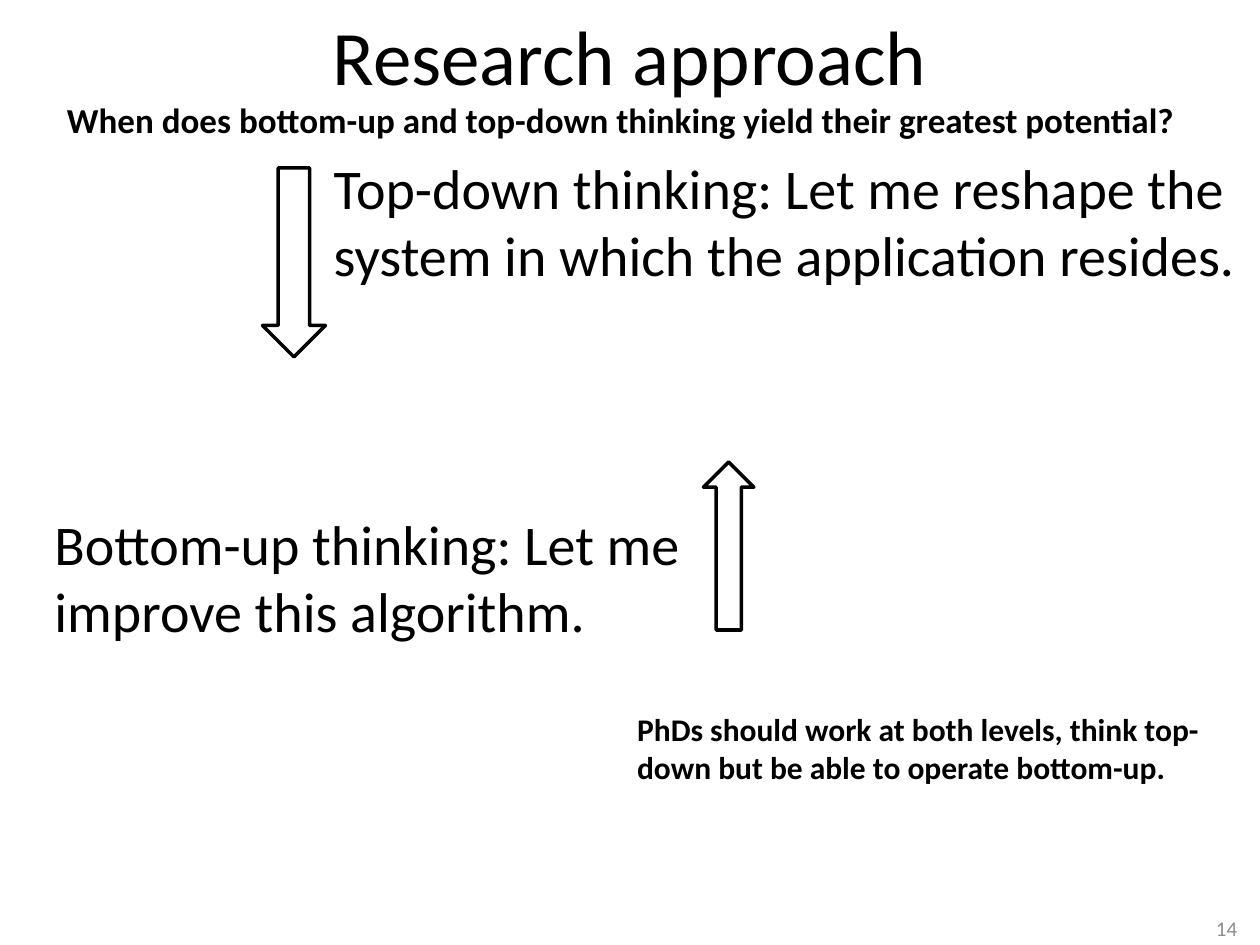
from pptx import Presentation
from pptx.dml.color import RGBColor
from pptx.enum.shapes import MSO_SHAPE
from pptx.enum.text import MSO_ANCHOR, PP_ALIGN
from pptx.util import Inches, Pt

BLACK = RGBColor(0x00, 0x00, 0x00)
GREY = RGBColor(0x8C, 0x8C, 0x8C)
FONT = "Calibri"
LEFT, CENTER, RIGHT = PP_ALIGN.LEFT, PP_ALIGN.CENTER, PP_ALIGN.RIGHT
TOP, MIDDLE = MSO_ANCHOR.TOP, MSO_ANCHOR.MIDDLE
DOWN, UP = MSO_SHAPE.DOWN_ARROW, MSO_SHAPE.UP_ARROW
COLUMNS, ROWS = 120, 90
CELL = Inches(10) / COLUMNS


def place(box):
    """Turn a box of grid columns and rows into slide lengths."""
    return [round(length * CELL) for length in box]


def add_text(page, box, text, size, bold=False, align=LEFT, anchor=TOP, color=BLACK):
    """Write one paragraph in a wrapping text box."""
    frame = page.shapes.add_textbox(*place(box)).text_frame
    frame.word_wrap = True
    frame.vertical_anchor = anchor
    frame.text = text
    para = frame.paragraphs[0]
    para.alignment = align
    font = para.runs[0].font
    font.name, font.size, font.bold = FONT, Pt(size), bold
    font.color.rgb = color


def add_arrow(page, box, direction):
    """Draw an outlined block arrow."""
    arrow = page.shapes.add_shape(direction, *place(box))
    arrow.shadow.inherit = False
    arrow.fill.background()
    arrow.line.color.rgb = BLACK
    arrow.line.width = Pt(2)


def add_heading(page, box):
    """Place the title and the question beneath it."""
    left, top, width, height = box
    add_text(page, (left + 6, top, width - 12, 10.4), "Research approach", 44,
             align=CENTER, anchor=MIDDLE)
    add_text(page, (left, top + 8.8, width - 1, height - 8.8),
             "When does bottom-up and top-down thinking yield their greatest potential? ",
             20, bold=True, align=CENTER)


def add_top_down(page, box):
    """Place the downward arrow with its statement on the right."""
    left, top, width, height = box
    add_arrow(page, (left, top + 2, 6, height - 2), DOWN)
    add_text(page, (left + 5.6, top, width - 5.6, 14.2),
             "Top-down thinking: Let me reshape the system in which the application resides.", 32)


def add_bottom_up(page, box):
    """Place the upward arrow with its statement on the left."""
    left, top, width, height = box
    add_text(page, (left, top + 3.9, 64, 14.2),
             "Bottom-up thinking: Let me improve this algorithm.", 32)
    add_arrow(page, (left + width - 4.8, top, 4.8, height - 2), UP)


def add_closing(page, box):
    """Place the conclusion and the page number."""
    left, top, width, height = box
    add_text(page, (left, top, 57, 8.5),
             "PhDs should work at both levels, think top-down but be able to operate bottom-up.",
             18, bold=True)
    add_text(page, (left + width - 28, top + height - 4.8, 28, 4.8), "14", 12,
             align=RIGHT, anchor=MIDDLE, color=GREY)


def main():
    """Build the slide and save the deck."""
    deck = Presentation()
    deck.slide_width, deck.slide_height = place((COLUMNS, ROWS))
    page = deck.slides.add_slide(deck.slide_layouts[6])
    add_heading(page, (0, 0, COLUMNS, 14))
    add_bottom_up(page, (4, 44, 67.8, 18))
    add_top_down(page, (25, 14, 94, 20))
    add_closing(page, (59.5, 67, 59.5, 23.8))
    deck.save("out.pptx")


if __name__ == "__main__":
    main()
